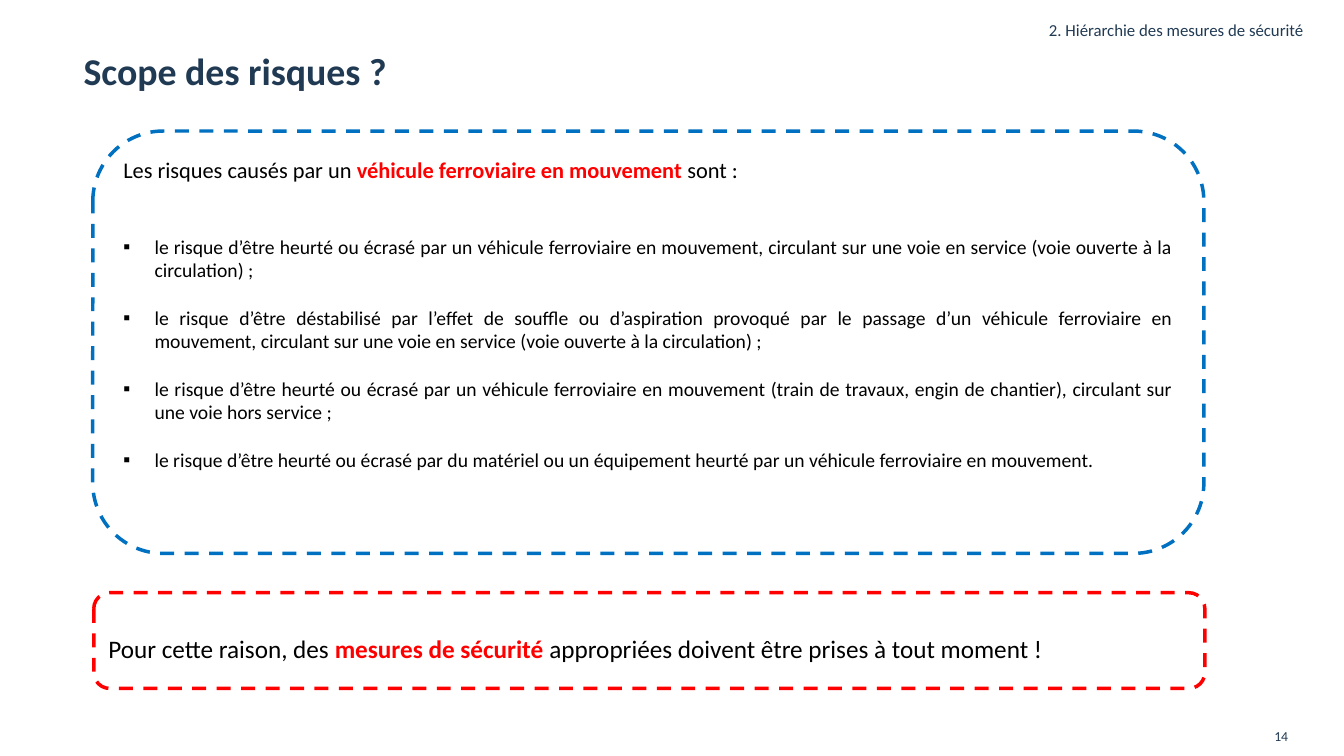
"""Build the slide on the risks caused by moving rail vehicles."""
from lxml import etree
from pptx import Presentation
from pptx.dml.color import RGBColor
from pptx.enum.dml import MSO_LINE
from pptx.enum.shapes import MSO_SHAPE
from pptx.enum.text import MSO_ANCHOR, PP_ALIGN
from pptx.oxml.ns import qn
from pptx.util import Inches, Pt

ROUNDED = MSO_SHAPE.ROUNDED_RECTANGLE
DASH = MSO_LINE.DASH
TOP, MIDDLE = MSO_ANCHOR.TOP, MSO_ANCHOR.MIDDLE
LEFT, RIGHT, JUSTIFY = PP_ALIGN.LEFT, PP_ALIGN.RIGHT, PP_ALIGN.JUSTIFY

FONT = "Calibri"
NAVY, BLUE, RED, BLACK = "213A53", "0070C0", "FF0000", "000000"
INDENT = Inches(0.31)

LABELS = [
    ("2. Hiérarchie des mesures de sécurité", (9.2, 0.17, 3.83, 0.39), 12, False, RIGHT, TOP, 0.9),
    ("14", (12.54, 7.1, 0.62, 0.4), 9.8, False, LEFT, MIDDLE, 1.0),
    ("Scope des risques ?", (0.73, 0.47, 11.88, 0.52), 27, True, LEFT, TOP, 0.9),
]
RISK_FRAME = (0.92, 1.3, 11.02, 4.19)
RISK_INTRO = ("Les risques causés par un ", "véhicule ferroviaire en mouvement ", "sont :")
RISKS = [
    "le risque d’être heurté ou écrasé par un véhicule ferroviaire en mouvement, "
    "circulant sur une voie en service (voie ouverte à la circulation) ;",
    "le risque d’être déstabilisé par l’effet de souffle ou d’aspiration provoqué par le passage "
    "d’un véhicule ferroviaire en mouvement, circulant sur une voie en service "
    "(voie ouverte à la circulation) ;",
    "le risque d’être heurté ou écrasé par un véhicule ferroviaire en mouvement "
    "(train de travaux, engin de chantier), circulant sur une voie hors service ;",
    "le risque d’être heurté ou écrasé par du matériel ou un équipement heurté "
    "par un véhicule ferroviaire en mouvement.",
]
FIRST_RISK_GAP, RISK_GAP = 36.6, 17.1
ADVICE_FRAME = (0.93, 5.88, 11.02, 0.95)
ADVICE = ("Pour cette raison, des ", "mesures de sécurité ", "appropriées doivent être prises à tout moment !")


def color(hex_code):
    return RGBColor.from_string(hex_code)


def set_font(paragraph, size, hex_code, bold=False):
    font = paragraph.font
    font.name, font.size, font.bold = FONT, Pt(size), bold
    font.color.rgb = color(hex_code)


def add_label(page, text, place, size, bold, align, anchor, spacing):
    frame = page.shapes.add_textbox(*map(Inches, place)).text_frame
    frame.word_wrap = True
    frame.vertical_anchor = anchor
    para = frame.paragraphs[0]
    para.text = text
    para.alignment, para.line_spacing = align, spacing
    set_font(para, size, NAVY, bold)


def add_frame(page, place, line_color, sentence, size, top_margin=0.05):
    box = page.shapes.add_shape(ROUNDED, *map(Inches, place))
    box.shadow.inherit = False
    box.fill.background()
    box.line.color.rgb = color(line_color)
    box.line.width, box.line.dash_style = Pt(2.5), DASH
    frame = box.text_frame
    frame.word_wrap = True
    frame.vertical_anchor = TOP
    frame.margin_top = Inches(top_margin)
    para = frame.paragraphs[0]
    para.alignment = JUSTIFY
    set_font(para, size, BLACK)
    for part, key in zip(sentence, (False, True, False)):
        span = para.add_run()
        span.text = part
        if key:
            span.font.bold = True
            span.font.color.rgb = color(RED)
    return frame


def add_bullet(frame, text, gap):
    para = frame.add_paragraph()
    para.text = text
    para.alignment, para.space_before = JUSTIFY, Pt(gap)
    properties = para._p.get_or_add_pPr()
    properties.set("marL", str(INDENT))
    properties.set("indent", str(-INDENT))
    etree.SubElement(properties, qn("a:buFont"), typeface="Wingdings")
    etree.SubElement(properties, qn("a:buChar"), char="▪")
    properties.find(qn("a:buFont")).set("typeface", FONT)
    set_font(para, 14, BLACK)


def main():
    deck = Presentation()
    deck.slide_width, deck.slide_height = Inches(13.33), Inches(7.5)
    page = deck.slides.add_slide(deck.slide_layouts[6])
    for label in LABELS:
        add_label(page, *label)
    risk_text = add_frame(page, RISK_FRAME, BLUE, RISK_INTRO, 16)
    for number, risk in enumerate(RISKS):
        add_bullet(risk_text, risk, RISK_GAP if number else FIRST_RISK_GAP)
    add_frame(page, ADVICE_FRAME, RED, ADVICE, 18, top_margin=0.36)
    deck.save("out.pptx")


if __name__ == "__main__":
    main()
